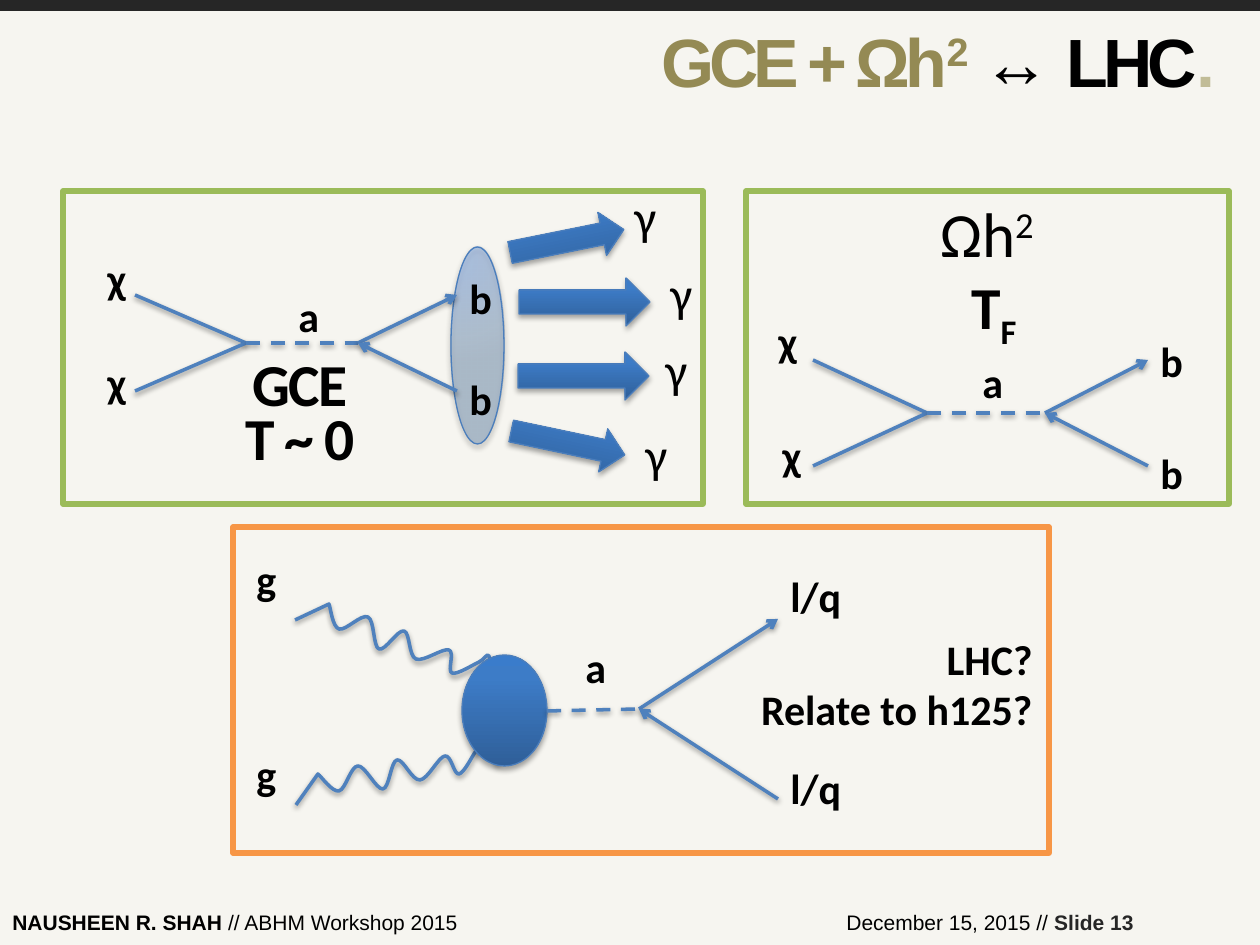
from dataclasses import dataclass

from lxml import etree
from pptx import Presentation
from pptx.dml.color import RGBColor
from pptx.enum.dml import MSO_LINE_DASH_STYLE as DASH
from pptx.enum.shapes import MSO_CONNECTOR, MSO_SHAPE
from pptx.enum.text import MSO_ANCHOR, MSO_AUTO_SIZE, PP_ALIGN
from pptx.oxml.ns import qn
from pptx.util import Emu, Pt


@dataclass(frozen=True)
class Theme:
    """Colours, fonts and type sizes of the slide."""
    paper: str = "F6F5F0"
    ink: str = "000000"
    dark: str = "262626"
    olive: str = "948A54"
    sand: str = "C1BC97"
    blue: str = "4F81BD"
    edge: str = "4B7EBC"
    green: str = "9BBB59"
    orange: str = "F79646"
    solid: tuple = ((0, "2F5F99", 100), (80, "3D7CC7", 100), (100, "3A7CCB", 100))
    glass: tuple = ((0, "3D83F1", 32), (76, "4F81BD", 32), (100, "4574AC", 32))
    head_font: str = "Arial"
    body_font: str = "Calibri"
    title: float = 39
    omega: float = 36
    caption: float = 34
    photon: float = 28
    label: float = 24
    footer: float = 12


T = Theme()
SCALE = 914400 / 126


def px(n):
    """Turn px into EMU."""
    return Emu(round(n * SCALE))


def rgb(code):
    """Turn a hex code into a colour."""
    return RGBColor.from_string(code)


def add(parent, tag, **attrs):
    """Append a DrawingML element."""
    return etree.SubElement(parent, qn("a:" + tag), {k: str(v) for k, v in attrs.items()})


def add_colour(parent, code, alpha):
    """Append a colour with its opacity in percent."""
    clr = add(parent, "srgbClr", val=code)
    if alpha < 100:
        add(clr, "alpha", val=alpha * 1000)


def add_shadow(sp, alpha=38, dist=20000):
    """Give a shape a soft shadow straight below."""
    effects = add(sp.element.spPr, "effectLst")
    shadow = add(effects, "outerShdw", blurRad=40000, dist=dist, dir=5400000, rotWithShape=0)
    add_colour(shadow, T.ink, alpha)


def set_gradient(sp, stops, radial):
    """Fill a shape with a linear or a radial gradient."""
    grad = etree.Element(qn("a:gradFill"), rotWithShape="1")
    stop_list = add(grad, "gsLst")
    for pos, code, alpha in stops:
        add_colour(add(stop_list, "gs", pos=pos * 1000), code, alpha)
    if radial:
        add(add(grad, "path", path="circle"), "fillToRect", l=15000, t=15000, r=100000, b=100000)
    else:
        add(grad, "lin", ang=16200000, scaled=0)
    sp.element.spPr.insert(2, grad)


def add_line(s, start, end, color=T.blue, width=2, arrow=False, dash=False, shadow=True):
    """Draw a straight line, perhaps dashed or with an arrowhead."""
    sp = s.shapes.add_connector(MSO_CONNECTOR.STRAIGHT, *map(px, (*start, *end)))
    sp.line.color.rgb = rgb(color)
    sp.line.width = Pt(width)
    if dash:
        sp.line.dash_style = DASH.DASH
    if arrow:
        add(sp.line._get_or_add_ln(), "tailEnd", type="arrow")
    if shadow:
        add_shadow(sp)
    else:
        add(sp.element.spPr, "effectLst")


def add_frame(s, box, color):
    """Draw the outline of a panel."""
    sp = s.shapes.add_shape(MSO_SHAPE.RECTANGLE, *map(px, box))
    sp.shadow.inherit = False
    sp.fill.background()
    sp.line.color.rgb = rgb(color)
    sp.line.width = Pt(3)


def add_solid(s, kind, box, turn=0, stops=T.solid, radial=False):
    """Draw a shaded ellipse or block arrow."""
    sp = s.shapes.add_shape(kind, *map(px, box))
    sp.rotation = turn
    set_gradient(sp, stops, radial)
    sp.line.color.rgb = rgb(T.edge)
    sp.line.width = Pt(0.75)
    add_shadow(sp, 35, 23000)


def round_segments(sp):
    """Turn all segments but the first into smooth Bézier curves."""
    segments = list(sp.element.iter(qn("a:lnTo")))
    points = [(int(n[0].get("x")), int(n[0].get("y"))) for n in segments]
    ends = [points[0], *points, points[-1]]
    for n, a, b, c, d in zip(segments[1:], ends, ends[1:], ends[2:], ends[3:]):
        n.tag = qn("a:cubicBezTo")
        n.remove(n[0])
        first = [q + (r - p) / 6 for p, q, r in zip(a, b, c)]
        second = [q - (r - p) / 6 for p, q, r in zip(b, c, d)]
        for x, y in (first, second, c):
            add(n, "pt", x=round(x), y=round(y))


def add_gluon(s, points):
    """Draw a wavy line that begins with a straight stretch."""
    start, *others = [tuple(map(px, point)) for point in points]
    builder = s.shapes.build_freeform(*start)
    builder.add_line_segments(others, close=False)
    sp = builder.convert_to_shape()
    round_segments(sp)
    sp.fill.background()
    sp.line.color.rgb = rgb(T.blue)
    sp.line.width = Pt(2)
    add_shadow(sp)


def add_run(p, text, size=None, bold=None, color=None, base=None, spc=None):
    """Add a run with its own size, weight, colour, baseline and spacing."""
    r = p.add_run()
    r.text = text
    if size:
        r.font.size = Pt(size)
    if bold is not None:
        r.font.bold = bold
    if color:
        r.font.color.rgb = rgb(color)
    for name, value in (("baseline", base), ("spc", spc)):
        if value is not None:
            r._r.get_or_add_rPr().set(name, str(value))


def add_text(s, box, paras, size=T.label, font=T.body_font, bold=True, color=T.ink,
             align=PP_ALIGN.LEFT, wrap=False, grow=True, spacing=None, spc=None):
    """Add a text box; each paragraph is a list of (text, run options)."""
    sp = s.shapes.add_textbox(*map(px, box))
    tf = sp.text_frame
    tf.word_wrap = wrap
    tf.auto_size = MSO_AUTO_SIZE.SHAPE_TO_FIT_TEXT if grow else MSO_AUTO_SIZE.NONE
    tf.vertical_anchor = MSO_ANCHOR.TOP if grow else MSO_ANCHOR.MIDDLE
    for i, runs in enumerate(paras):
        p = tf.add_paragraph() if i else tf.paragraphs[0]
        p.alignment = align
        if spacing:
            p.line_spacing = spacing
        p.font.name, p.font.size, p.font.bold = font, Pt(size), bold
        p.font.color.rgb = rgb(color)
        for text, options in runs:
            add_run(p, text, **{"spc": spc, **options})


def add_labels(s, labels, width, height, **style):
    """Add one small text box for each (text, left, top)."""
    for text, x, y in labels:
        add_text(s, (x, y, width, height), [[(text, {})]], **style)


def add_decay(s, start, vertex, x, top, bottom):
    """Draw a dashed mediator that splits into a pair."""
    add_line(s, start, vertex, dash=True)
    add_line(s, vertex, (x, top), arrow=True)
    add_line(s, (x, bottom), vertex, arrow=True)


def add_annihilation(s, xs, ys):
    """Draw a pair meeting, the mediator and the outgoing pair."""
    left, meet, split, right = xs
    top, mid, bottom = ys
    add_line(s, (left, top), (meet, mid))
    add_line(s, (meet, mid), (left, bottom))
    add_decay(s, (meet, mid), (split, mid), right, top, bottom)


def add_master(s):
    """Add the top bar, the footer and the title."""
    add_line(s, (0, 5), (1260, 5), T.dark, 6.75, shadow=False)
    footer = dict(size=T.footer, font=T.head_font, bold=False, wrap=True)
    add_text(s, (0, 903, 504, 38),
             [[("NAUSHEEN R. SHAH ", dict(bold=True)), ("// ABHM Workshop 2015", {})]], **footer)
    add_text(s, (820, 903, 326, 38),
             [[("December 15, 2015 // ", {}), ("Slide 13", dict(bold=True, color=T.dark))]],
             align=PP_ALIGN.RIGHT, **footer)
    add_text(s, (53, 21, 1175, 78),
             [[("GCE + Ωh", {}), ("2 ", dict(base=30000, spc=70)),
               ("↔ ", dict(bold=False, color=T.ink, spc=-150)),
               ("LHC", dict(color=T.ink)), (".", dict(color=T.sand))]],
             T.title, T.head_font, color=T.olive, align=PP_ALIGN.RIGHT,
             wrap=True, grow=False, spc=-300)


def add_gce_panel(s):
    """Add the panel on the galactic centre excess."""
    add_solid(s, MSO_SHAPE.OVAL, (451, 247, 53, 197), stops=T.glass, radial=True)
    add_annihilation(s, (135, 246, 358, 457), (295, 343, 391))
    add_labels(s, [("χ", 95, 246), ("χ", 95, 350), ("a", 286, 284),
                   ("b", 457, 266), ("b", 457, 367)], 45, 58)
    for x, y, w, h, turn in ((519, 278, 131, 48, 0), (518, 352, 131, 48, 0),
                             (510, 421, 116, 44, 11.9), (509, 219, 116, 44, 348.6)):
        add_solid(s, MSO_SHAPE.RIGHT_ARROW, (x, y, w, h), turn)
    add_labels(s, [("γ", 622, 180), ("γ", 653, 333), ("γ", 633, 418), ("γ", 658, 257)],
               45, 66, size=T.photon, bold=False)
    add_text(s, (233, 358, 134, 123), [[("GCE", {})], [("T ~ 0", {})]], T.caption,
             align=PP_ALIGN.CENTER, spacing=0.75, spc=-100)
    add_frame(s, (63, 191, 640, 313), T.green)


def add_relic_panel(s):
    """Add the panel on the relic density."""
    add_annihilation(s, (813, 927, 1045, 1148), (360, 413, 466))
    add_labels(s, [("χ", 766, 309), ("χ", 770, 423), ("a", 970, 350),
                   ("b", 1148, 329), ("b", 1148, 441)], 47, 63)
    strong = dict(size=T.caption, bold=True)
    add_text(s, (924, 188, 126, 161),
             [[("Ωh", {}), ("2", dict(base=30000))],
              [(" T", strong), ("F", dict(base=-25000, **strong))]],
             T.omega, bold=False, align=PP_ALIGN.CENTER)
    add_frame(s, (746, 191, 483, 313), T.green)


def add_collider_panel(s):
    """Add the panel on production at the collider."""
    add_gluon(s, [(296, 805), (318, 774), (339, 791), (358, 766), (383, 789), (397, 760),
                  (420, 780), (445, 756), (459, 774), (476, 751), (483, 741), (498, 764)])
    add_gluon(s, [(295, 620), (329, 604), (339, 629), (368, 617), (379, 649), (404, 631),
                  (416, 659), (449, 650), (452, 673), (479, 662), (489, 656), (491, 683)])
    add_solid(s, MSO_SHAPE.OVAL, (462, 655, 85, 111))
    add_decay(s, (547, 711), (639, 709), 778, 619, 799)
    add_labels(s, [("g", 244, 547), ("g", 244, 742), ("a", 573, 635)], 63, 110)
    add_labels(s, [("l/q", 778, 564), ("l/q", 778, 756)], 97, 110)
    add_text(s, (721, 627, 324, 115), [[("LHC?", {})], [("Relate to h125?", {})]],
             align=PP_ALIGN.RIGHT, wrap=True)
    add_frame(s, (233, 527, 816, 326), T.orange)


def main():
    """Build and save the slide."""
    prs = Presentation()
    prs.slide_width, prs.slide_height = px(1260), px(945)
    s = prs.slides.add_slide(prs.slide_layouts[6])
    s.background.fill.solid()
    s.background.fill.fore_color.rgb = rgb(T.paper)
    add_master(s)
    add_gce_panel(s)
    add_relic_panel(s)
    add_collider_panel(s)
    prs.save("out.pptx")


if __name__ == "__main__":
    main()
